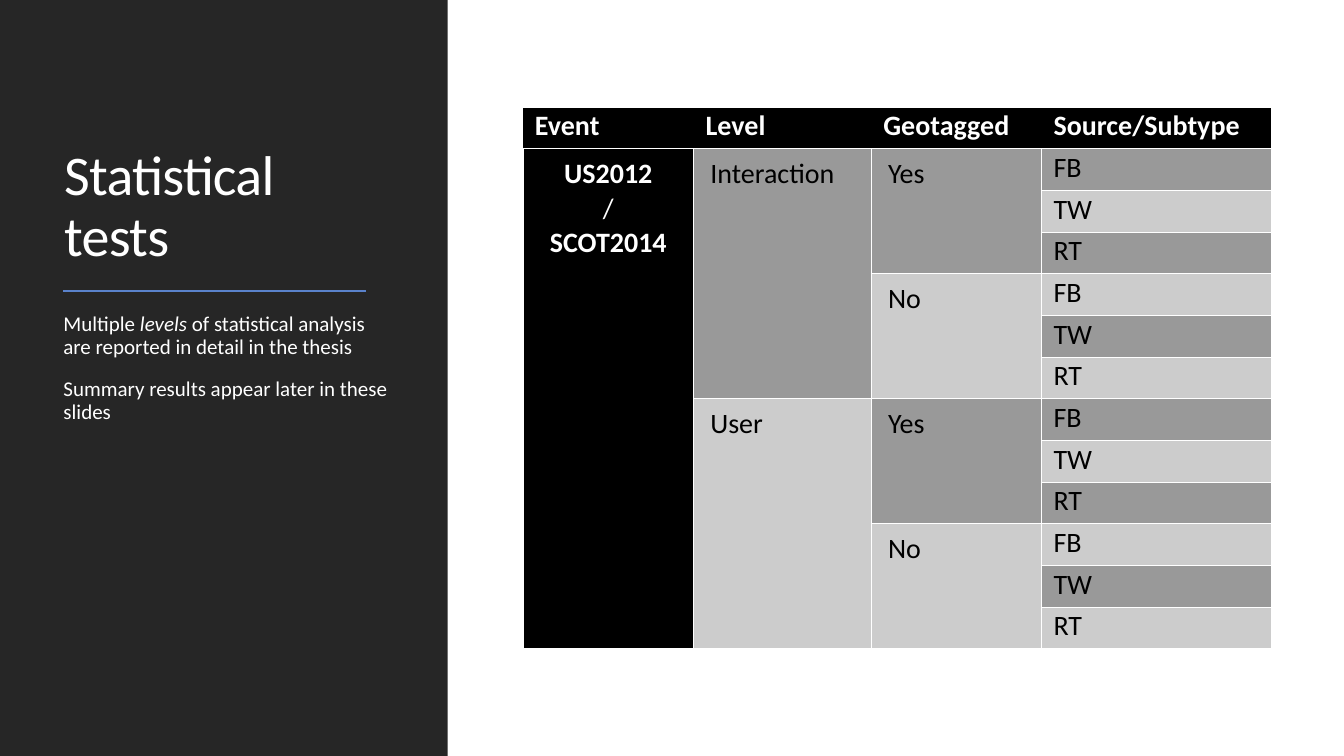
import pptx
import pptx.dml.color
import pptx.enum.shapes
import pptx.enum.text
import pptx.oxml
import pptx.oxml.ns
import pptx.util

Cm = pptx.util.Cm
Pt = pptx.util.Pt
RGBColor = pptx.dml.color.RGBColor
Align = pptx.enum.text.PP_ALIGN
Anchor = pptx.enum.text.MSO_ANCHOR

FONT = "Calibri"
WHITE = RGBColor(0xFF, 0xFF, 0xFF)
BLACK = RGBColor(0, 0, 0)
CHARCOAL = RGBColor(0x26, 0x26, 0x26)
BLUE = RGBColor(0x5A, 0x82, 0xCB)
MID_GREY = RGBColor(0x99, 0x99, 0x99)
LIGHT_GREY = RGBColor(0xCC, 0xCC, 0xCC)

HEADERS = ["Event", "Level", "Geotagged", "Source/Subtype"]
LEVELS = ["Interaction", "User"]
GEOTAGGED = ["Yes", "No"]
SOURCES = ["FB", "TW", "RT"]
COLUMN_WIDTHS = [4.3, 4.48, 4.29, 5.79]
ROW_HEIGHT = 1.05
TIGHT_MARGINS = (0.3, 0.05, 0.3, 0)
WIDE_MARGINS = (0.42, 0.21, 0.42, 0.21)


def apply_format(target, values):
    for name, value in values.items():
        setattr(target, name, value)


def set_margins(target, margins):
    sides = ("margin_left", "margin_top", "margin_right", "margin_bottom")
    apply_format(target, {side: Cm(margin) for side, margin in zip(sides, margins)})


def add_run(paragraph, text, size, color=WHITE, **extra):
    run = paragraph.add_run()
    run.text = text
    apply_format(run.font, {"name": FONT, "size": Pt(size), **extra})
    run.font.color.rgb = color
    return run


def add_panel(slide, width, height):
    panel = slide.shapes.add_shape(
        pptx.enum.shapes.MSO_SHAPE.RECTANGLE, 0, 0, width, height)
    panel.shadow.inherit = False
    panel.fill.solid()
    panel.fill.fore_color.rgb = CHARCOAL
    panel.line.fill.background()


def add_text_frame(slide, left, top, width, height, margins, anchor):
    box = slide.shapes.add_textbox(Cm(left), Cm(top), Cm(width), Cm(height))
    frame = box.text_frame
    apply_format(frame, {"word_wrap": True, "vertical_anchor": anchor})
    set_margins(frame, margins)
    return frame


def add_title(slide):
    frame = add_text_frame(slide, 1.37, 1.45, 8.56, 5.44,
                           (0.25, 0.13, 0.25, 0.13), Anchor.BOTTOM)
    paragraph = frame.paragraphs[0]
    paragraph.line_spacing = 0.9
    for index, word in enumerate(["Statistical", "tests"]):
        if index:
            paragraph.add_line_break()
        run = add_run(paragraph, word, 40)
        run.font._element.set("spc", "-50")


def add_summary(slide):
    frame = add_text_frame(slide, 1.6, 7.77, 8.36, 8.86,
                           (0, 0.13, 0, 0.13), Anchor.TOP)
    first = frame.paragraphs[0]
    add_run(first, "Multiple ", 15)
    add_run(first, "levels", 15, italic=True)
    add_run(first, " of statistical analysis are reported in detail in the thesis", 15)
    second = frame.add_paragraph()
    add_run(second, "Summary results appear later in these slides", 15)
    for paragraph in frame.paragraphs:
        apply_format(paragraph, {"line_spacing": 0.9, "space_after": Pt(2)})
    second.space_before = Pt(12)


def add_rule(slide):
    rule = slide.shapes.add_connector(
        pptx.enum.shapes.MSO_CONNECTOR.STRAIGHT, Cm(1.6), Cm(7.34), Cm(9.22), Cm(7.34))
    rule.line.color.rgb = BLUE
    rule.line.width = Pt(1.5)
    properties = rule._element.spPr
    properties.append(properties.makeelement(pptx.oxml.ns.qn("a:effectLst"), {}))


def set_borders(cell, visible_sides):
    properties = cell._tc.get_or_add_tcPr()
    for side in "LRTB":
        paint = "<a:noFill/>"
        if side in visible_sides:
            paint = f'<a:solidFill><a:srgbClr val="{WHITE}"/></a:solidFill>'
        properties.append(pptx.oxml.parse_xml(
            f'<a:ln{side} {pptx.oxml.ns.nsdecls("a")} w="{Pt(1)}">{paint}</a:ln{side}>'))


def fill_cell(cell, lines, fill, color=BLACK, margins=TIGHT_MARGINS,
              borders="LRTB", alignment=Align.LEFT):
    set_borders(cell, borders)
    cell.fill.solid()
    cell.fill.fore_color.rgb = fill
    cell.vertical_anchor = Anchor.TOP
    set_margins(cell, margins)
    for index, (text, bold) in enumerate(lines):
        frame = cell.text_frame
        paragraph = frame.add_paragraph() if index else frame.paragraphs[0]
        paragraph.alignment = alignment
        add_run(paragraph, text, 20, color, bold=bold)


def fill_column(table, column, labels, span, **style):
    last_row = len(table.rows) - 1
    for index in range(last_row // span):
        row = 1 + index * span
        cell = table.cell(row, column)
        if span > 1:
            cell.merge(table.cell(row + span - 1, column))
        fill = LIGHT_GREY if index % 2 else MID_GREY
        fill_cell(cell, [(labels[index % len(labels)], False)], fill, **style)


def add_tests_table(slide):
    body_rows = len(LEVELS) * len(GEOTAGGED) * len(SOURCES)
    row_count = body_rows + 1
    table = slide.shapes.add_table(
        row_count, len(HEADERS), Cm(13.18), Cm(2.7),
        Cm(sum(COLUMN_WIDTHS)), Cm(ROW_HEIGHT * row_count)).table
    for column, width in zip(table.columns, COLUMN_WIDTHS):
        column.width = Cm(width)
    for row in table.rows:
        row.height = Cm(ROW_HEIGHT)
    for column, header in enumerate(HEADERS):
        fill_cell(table.cell(0, column), [(header, True)], BLACK, WHITE, borders="TB")
    event = table.cell(1, 0)
    event.merge(table.cell(body_rows, 0))
    fill_cell(event, [("US2012", True), ("/", False), ("SCOT2014", True)],
              BLACK, WHITE, WIDE_MARGINS, alignment=Align.CENTER)
    source_span = len(SOURCES)
    fill_column(table, 1, LEVELS, source_span * len(GEOTAGGED), margins=WIDE_MARGINS)
    fill_column(table, 2, GEOTAGGED, source_span, margins=WIDE_MARGINS)
    fill_column(table, 3, SOURCES, 1)


def main():
    presentation = pptx.Presentation()
    presentation.slide_width = Cm(33.87)
    presentation.slide_height = Cm(19.05)
    slide = presentation.slides.add_slide(presentation.slide_layouts[6])
    add_panel(slide, Cm(11.28), presentation.slide_height)
    add_title(slide)
    add_rule(slide)
    add_summary(slide)
    add_tests_table(slide)
    presentation.save("out.pptx")


if __name__ == "__main__":
    main()
